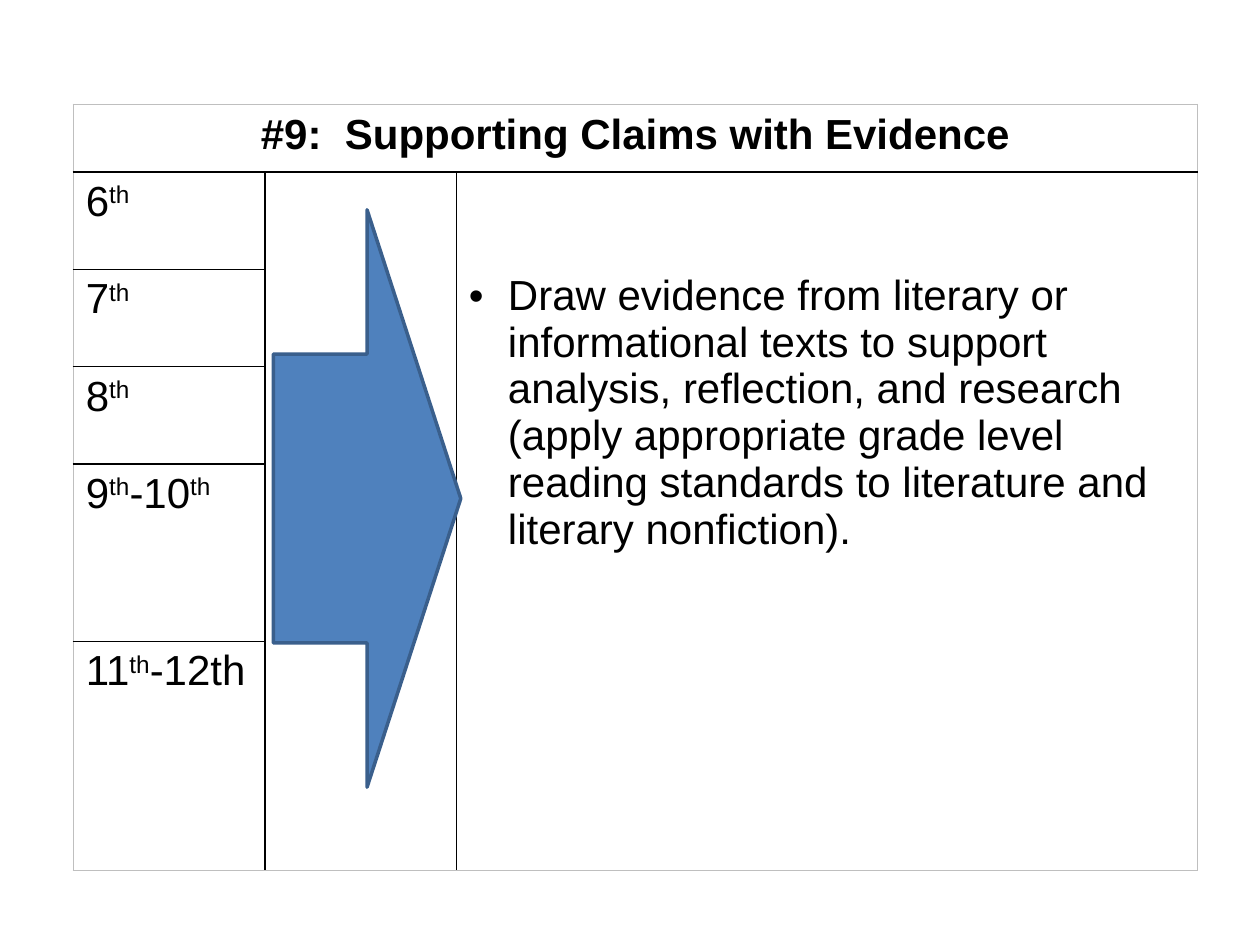
import pptx
import pptx.util
import pptx.dml.color
import pptx.enum.shapes
import pptx.enum.text
import pptx.oxml
import pptx.oxml.ns
from lxml import etree

Cm, Pt = pptx.util.Cm, pptx.util.Pt
RGBColor = pptx.dml.color.RGBColor
PP_ALIGN = pptx.enum.text.PP_ALIGN
qn = pptx.oxml.ns.qn

BLACK = RGBColor(0x00, 0x00, 0x00)
GREY = RGBColor(0xBF, 0xBF, 0xBF)
BLUE = RGBColor(0x4F, 0x81, 0xBD)
DARK_BLUE = RGBColor(0x3A, 0x5F, 0x8C)

HEADING = "#9:  Supporting Claims with Evidence"
GRADES = [
    ["6", "th"],
    ["7", "th"],
    ["8", "th"],
    ["9", "th", "-10", "th"],
    ["11", "th", "-12th"],
]
STANDARD = (
    "Draw evidence from literary or informational texts to support analysis, "
    "reflection, and research (apply appropriate grade level reading standards "
    "to literature and literary nonfiction)."
)
COLUMN_WIDTHS = [3.86, 3.86, 14.94]
ROW_HEIGHTS = [1.36, 1.96, 1.96, 1.96, 3.58, 4.62]
MERGED = [(0, 0, 0, 2), (1, 1, 5, 1), (1, 2, 5, 2)]
LAST_ROW, LAST_COLUMN = len(ROW_HEIGHTS) - 1, len(COLUMN_WIDTHS) - 1
MARGINS = {"margin_left": Cm(0.25), "margin_right": Cm(0.25),
           "margin_top": Cm(0.13), "margin_bottom": Cm(0.13)}
STANDARD_TOP = Cm(2.02)
BULLET_INDENT = Cm(0.79)
BODY = {"name": "Arial", "size": Pt(24), "bold": False}
TITLE = {**BODY, "bold": True}


def apply(target, values):
    for name, value in values.items():
        setattr(target, name, value)


def write(cell, pieces, font_values):
    paragraph = cell.text_frame.paragraphs[0]
    for index, piece in enumerate(pieces):
        run = paragraph.add_run()
        run.text = piece
        apply(run.font, font_values)
        run.font.color.rgb = BLACK
        if index % 2:
            run.font._element.set("baseline", "30000")
    return paragraph


def draw_borders(cell, row, column):
    top, left, bottom, right = next(
        (m for m in MERGED if m[0] <= row <= m[2] and m[1] <= column <= m[3]),
        (row, column, row, column))
    origin = (row, column) == (top, left)
    edges = {
        "lnL": (column == left, left == 0),
        "lnR": (origin or column == right, right == LAST_COLUMN),
        "lnT": (row == top, top == 0),
        "lnB": (origin or row == bottom, bottom == LAST_ROW),
    }
    properties = cell._tc.get_or_add_tcPr()
    for tag, (visible, outer) in edges.items():
        line = etree.SubElement(properties, qn(f"a:{tag}"), w=str(Pt(1)))
        if visible:
            fill = etree.SubElement(line, qn("a:solidFill"))
            etree.SubElement(fill, qn("a:srgbClr"), val=str(GREY if outer else BLACK))
        else:
            etree.SubElement(line, qn("a:noFill"))


def add_grades_table(slide):
    table = slide.shapes.add_table(
        len(ROW_HEIGHTS), len(COLUMN_WIDTHS), Cm(1.48), Cm(2.11),
        Cm(sum(COLUMN_WIDTHS)), Cm(sum(ROW_HEIGHTS))).table
    apply(table, {"first_row": False, "horz_banding": False})
    for column, width in zip(table.columns, COLUMN_WIDTHS):
        column.width = Cm(width)
    for row, height in zip(table.rows, ROW_HEIGHTS):
        row.height = Cm(height)
    for top, left, bottom, right in MERGED:
        table.cell(top, left).merge(table.cell(bottom, right))
    for row in range(LAST_ROW + 1):
        for column in range(LAST_COLUMN + 1):
            cell = table.cell(row, column)
            apply(cell, MARGINS)
            draw_borders(cell, row, column)
            cell.fill.background()

    write(table.cell(0, 0), [HEADING], TITLE).alignment = PP_ALIGN.CENTER
    for row, grade in enumerate(GRADES, 1):
        write(table.cell(row, 0), grade, BODY)

    standard = table.cell(1, 2)
    standard.margin_top = STANDARD_TOP
    bullet = write(standard, [STANDARD], BODY)._p.get_or_add_pPr()
    bullet.set("marL", str(BULLET_INDENT))
    bullet.set("indent", str(-BULLET_INDENT))
    etree.SubElement(bullet, qn("a:buFont"), typeface="Arial")
    etree.SubElement(bullet, qn("a:buChar"), char="•")


def add_arrow(slide):
    arrow = slide.shapes.add_shape(
        pptx.enum.shapes.MSO_SHAPE.RIGHT_ARROW, Cm(5.51), Cm(4.23), Cm(3.78), Cm(11.64))
    arrow.shadow.inherit = False
    arrow.fill.solid()
    arrow.fill.fore_color.rgb = BLUE
    arrow.line.color.rgb = DARK_BLUE
    arrow.line.width = Pt(2)


def main():
    deck = pptx.Presentation()
    apply(deck, {"slide_width": Cm(25.4), "slide_height": Cm(19.05)})
    slide = deck.slides.add_slide(deck.slide_layouts[6])
    add_grades_table(slide)
    add_arrow(slide)
    deck.save("out.pptx")


if __name__ == "__main__":
    main()
